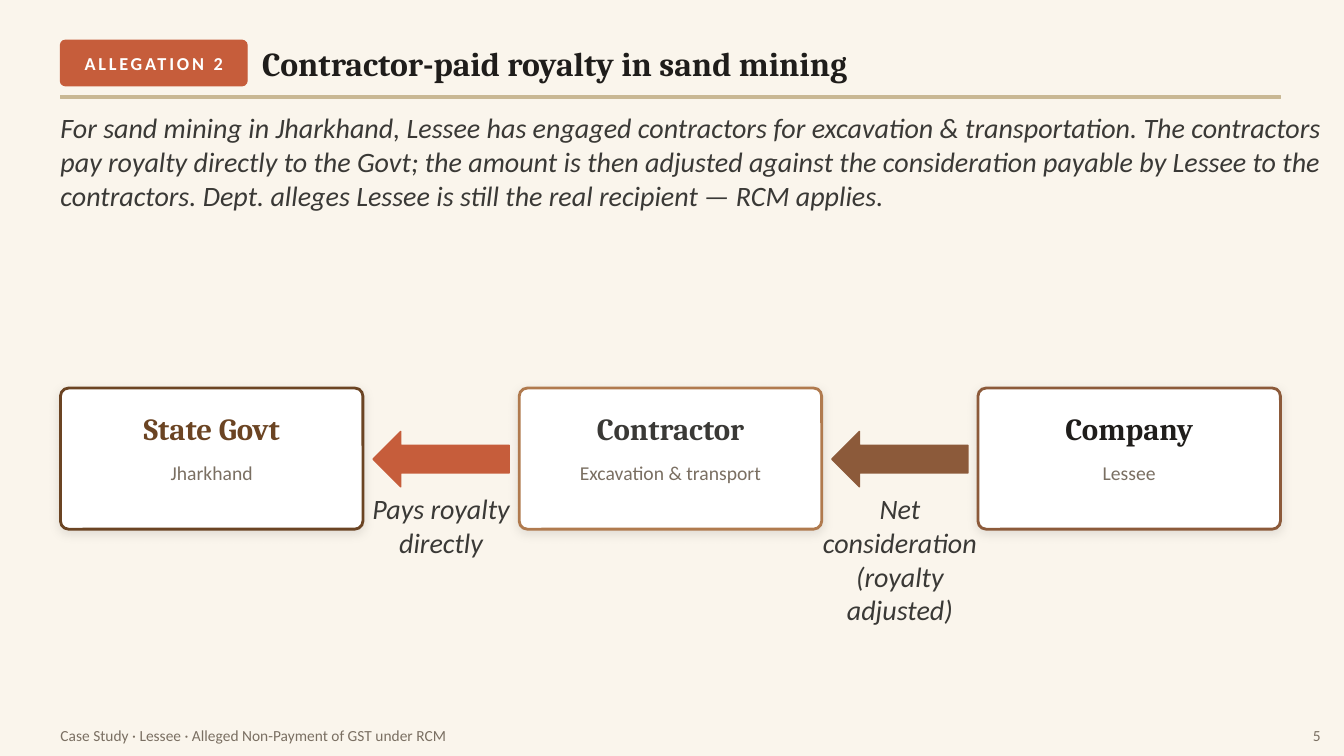
"""Builds the slide on contractor-paid royalty in sand mining."""
import pptx
import pptx.dml.color
import pptx.enum.shapes
import pptx.enum.text
import pptx.oxml
import pptx.oxml.ns
import pptx.util

PX = 9144
COLORS = {
    "cream": "FAF5EC", "rust": "C65D3B", "white": "FFFFFF", "ink": "1F1D1B",
    "sand": "C9B894", "charcoal": "3A3936", "umber": "6B4423",
    "copper": "B07A4E", "brown": "8C5A3A", "taupe": "7A6F62",
}
SHAPES = pptx.enum.shapes.MSO_SHAPE
ALIGN = pptx.enum.text.PP_ALIGN
ANCHOR = pptx.enum.text.MSO_ANCHOR


def add_block(page, kind, left, top, width, height, fill, line, weight=1, radius=None):
    block = page.shapes.add_shape(kind, left * PX, top * PX, width * PX, height * PX)
    block.shadow.inherit = False
    block.fill.solid()
    block.fill.fore_color.rgb = pptx.dml.color.RGBColor.from_string(COLORS[fill])
    block.line.color.rgb = pptx.dml.color.RGBColor.from_string(COLORS[line])
    block.line.width = pptx.util.Pt(weight)
    if radius:
        block.adjustments[0] = radius / height
    return block


def add_text(page, text, left, top, width, height, size, color, font="Calibri",
             bold=False, italic=False, align=ALIGN.LEFT, anchor=ANCHOR.MIDDLE):
    box = page.shapes.add_textbox(left * PX, top * PX, width * PX, height * PX)
    frame = box.text_frame
    frame.word_wrap = True
    frame.vertical_anchor = anchor
    frame.margin_left = frame.margin_top = frame.margin_right = frame.margin_bottom = 0
    para = frame.paragraphs[0]
    para.alignment = align
    para.font.name = font
    para.font.size = pptx.util.Pt(size)
    para.font.bold = bold
    para.font.italic = italic
    para.font.color.rgb = pptx.dml.color.RGBColor.from_string(COLORS[color])
    span = para.add_run()
    span.text = text
    return span


deck = pptx.Presentation()
deck.slide_width = 1333 * PX
deck.slide_height = 750 * PX
page = deck.slides.add_slide(deck.slide_layouts[6])
page.background.fill.solid()
page.background.fill.fore_color.rgb = pptx.dml.color.RGBColor.from_string(COLORS["cream"])

add_block(page, SHAPES.ROUNDED_RECTANGLE, 60, 40, 185, 45, "rust", "rust", radius=5)
badge = add_text(page, "ALLEGATION 2", 60, 40, 185, 45, 13, "white", bold=True, align=ALIGN.CENTER)
badge._r.get_or_add_rPr().set("spc", "200")
add_text(page, "Contractor-paid royalty in sand mining", 260, 35, 1050, 55, 24, "ink",
         font="Cambria", bold=True)
add_block(page, SHAPES.RECTANGLE, 60, 95, 1210, 3, "sand", "sand")
add_text(page, "For sand mining in Jharkhand, Lessee has engaged contractors for excavation & "
         "transportation. The contractors pay royalty directly to the Govt; the amount is then "
         "adjusted against the consideration payable by Lessee to the contractors. Dept. alleges "
         "Lessee is still the real recipient — RCM applies.",
         60, 110, 1270, 170, 20, "charcoal", italic=True, anchor=ANCHOR.TOP)

CARD_LEFT, CARD_WIDTH, CARD_STEP = 60, 300, 455
SHADOW = (
    f'<a:outerShdw {pptx.oxml.ns.nsdecls("a")} blurRad="101600" dist="25400" dir="5400000" '
    'algn="bl" rotWithShape="0"><a:srgbClr val="000000"><a:alpha val="10000"/></a:srgbClr>'
    '</a:outerShdw>'
)
parties = [
    ("State Govt", "Jharkhand", "umber", "umber"),
    ("Contractor", "Excavation & transport", "copper", "charcoal"),
    ("Company", "Lessee", "brown", "ink"),
]
for index, (party, role, border, color) in enumerate(parties):
    left = CARD_LEFT + index * CARD_STEP
    card = add_block(page, SHAPES.ROUNDED_RECTANGLE, left, 385, CARD_WIDTH, 140,
                     "white", border, weight=2, radius=8)
    effects = card._element.spPr.find(pptx.oxml.ns.qn("a:effectLst"))
    effects.append(pptx.oxml.parse_xml(SHADOW))
    add_text(page, party, left + 10, 397, CARD_WIDTH - 20, 55, 22, color,
             font="Cambria", bold=True, align=ALIGN.CENTER)
    add_text(page, role, left + 10, 457, CARD_WIDTH - 20, 62, 14, "taupe",
             align=ALIGN.CENTER, anchor=ANCHOR.TOP)

payments = [
    ("Pays royalty directly", "rust"),
    ("Net consideration (royalty adjusted)", "brown"),
]
for index, (payment, color) in enumerate(payments):
    left = CARD_LEFT + CARD_WIDTH + 10 + index * CARD_STEP
    add_block(page, SHAPES.LEFT_ARROW, left, 428, 135, 55, color, color)
    add_text(page, payment, left - 30, 488, 195, 45, 20, "charcoal",
             italic=True, align=ALIGN.CENTER, anchor=ANCHOR.TOP)

add_text(page, "Case Study · Lessee · Alleged Non-Payment of GST under RCM",
         60, 715, 1100, 30, 11, "taupe")
add_text(page, "5", 1260, 715, 50, 30, 11, "taupe", align=ALIGN.RIGHT)

deck.save("out.pptx")
